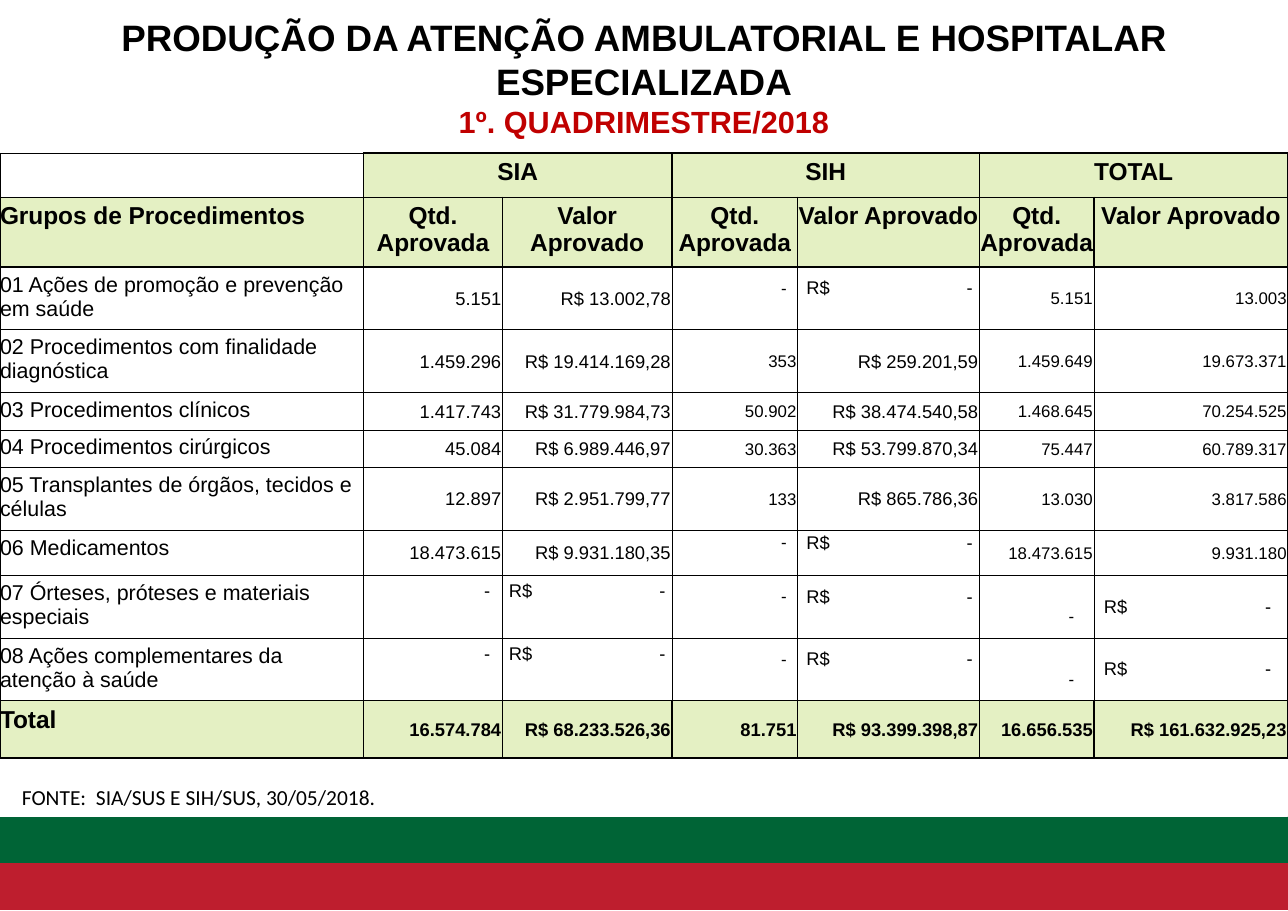
from lxml import etree
from pptx import Presentation
from pptx.dml.color import RGBColor
from pptx.enum.shapes import MSO_SHAPE
from pptx.enum.text import MSO_ANCHOR, PP_ALIGN
from pptx.oxml.ns import qn
from pptx.util import Inches, Pt

LEFT, CENTER, RIGHT = PP_ALIGN.LEFT, PP_ALIGN.CENTER, PP_ALIGN.RIGHT
TOP, MIDDLE = MSO_ANCHOR.TOP, MSO_ANCHOR.MIDDLE
RECT = MSO_SHAPE.RECTANGLE

# Content
WIDTH, HEIGHT = 11.69, 8.27
BLACK, WHITE, LIME = "000000", "FFFFFF", "E4F0C3"
BANDS = [  # top, height, colour, line width
    (7.81, 0.45, "BE1E2E", 0.75),
    (7.38, 0.45, "006436", 0.75),
    (0, 7.4, WHITE, 2),
]
TITLE = [
    ("PRODUÇÃO DA ATENÇÃO AMBULATORIAL E HOSPITALAR ESPECIALIZADA", 24, BLACK),
    ("1º. QUADRIMESTRE/2018", 20, "C00000"),
]
SOURCE = "FONTE:  SIA/SUS E SIH/SUS, 30/05/2018."
GROUPS = ["SIA", "SIH", "TOTAL"]
HEADS = ["Grupos de Procedimentos"] + ["Qtd. Aprovada", "Valor Aprovado"] * 3
BODY = [
    ("01 Ações de promoção e prevenção em saúde", "5.151", "R$ 13.002,78",
     "-", "R$\t-", "5.151", "13.003"),
    ("02 Procedimentos com finalidade diagnóstica", "1.459.296", "R$ 19.414.169,28",
     "353", "R$ 259.201,59", "1.459.649", "19.673.371"),
    ("03 Procedimentos clínicos", "1.417.743", "R$ 31.779.984,73",
     "50.902", "R$ 38.474.540,58", "1.468.645", "70.254.525"),
    ("04 Procedimentos cirúrgicos", "45.084", "R$ 6.989.446,97",
     "30.363", "R$ 53.799.870,34", "75.447", "60.789.317"),
    ("05 Transplantes de órgãos, tecidos e células", "12.897", "R$ 2.951.799,77",
     "133", "R$ 865.786,36", "13.030", "3.817.586"),
    ("06 Medicamentos", "18.473.615", "R$ 9.931.180,35",
     "-", "R$\t-", "18.473.615", "9.931.180"),
    ("07 Órteses, próteses e materiais especiais", "-", "R$\t-",
     "-", "R$\t-", "-", "R$\t-"),
    ("08 Ações complementares da atenção à saúde", "-", "R$\t-",
     "-", "R$\t-", "-", "R$\t-"),
]
SUMS = ("Total", "16.574.784", "R$ 68.233.526,36", "81.751",
        "R$ 93.399.398,87", "16.656.535", "R$ 161.632.925,23")
COLS = [3.3, 1.26, 1.54, 1.14, 1.65, 1.04, 1.76]
ROWS = [0.4, 0.63, 0.57, 0.57, 0.34, 0.34, 0.57, 0.41, 0.57, 0.57, 0.52]
SIZES = [14, 12, 12, 11, 12, 11, 11]
# Dash cells by column: left inset, right inset, lift above the middle
DASH = {1: (0.01, 0.11, 0.28), 2: (0.06, 0.06, 0.28), 3: (0.01, 0.1, 0.18),
        4: (0.08, 0.06, 0.18), 5: (0.01, 0.18, -0.18), 6: (0.09, 0.15, 0)}
LAST = len(ROWS) - 1
THIN, BOLD = 0.5, 0.96


def color(code):
    return RGBColor.from_string(code)


def style(para, size, bold=False, tint=BLACK, face="Arial", align=LEFT):
    para.alignment = align
    font = para.font
    font.size, font.bold, font.name = Pt(size), bold, face
    font.color.rgb = color(tint)


def inset(box, left, top, right, bottom):
    box.margin_left, box.margin_top = Inches(left), Inches(top)
    box.margin_right, box.margin_bottom = Inches(right), Inches(bottom)


def border(cell, row, col):
    head = row < 2 or row == LAST
    blank = row == col == 0
    heavy = {"L": not blank and (head or col == 0),
             "R": head or col == len(COLS) - 1,
             "T": not blank and (head or row == 2),
             "B": head or row == LAST - 1}
    props = cell._tc.get_or_add_tcPr()
    for spot, (side, thick) in enumerate(heavy.items()):
        line = etree.Element(qn(f"a:ln{side}"), w=str(Pt(BOLD if thick else THIN)))
        fill = etree.SubElement(line, qn("a:solidFill"))
        etree.SubElement(fill, qn("a:srgbClr"), val=BLACK)
        props.insert(spot, line)


def fill_cell(cell, row, col, text):
    if (row, col) != (0, 0) and (row < 2 or row == LAST):
        cell.fill.solid()
        cell.fill.fore_color.rgb = color(LIME)
    else:
        cell.fill.background()
    border(cell, row, col)
    if not text:
        return
    para = cell.text_frame.paragraphs[0]
    para.text = text
    label = row < 2 or col == 0
    cell.vertical_anchor = TOP if label else MIDDLE
    if label:
        inset(cell, 0, 0.05, 0, 0.05)
    else:
        inset(cell, 0.01, 0.01, 0.01, 0)
    align = LEFT if col == 0 else CENTER if row < 2 else RIGHT
    if text.endswith("-"):
        left, right, lift = DASH[col]
        inset(cell, left, max(-lift, 0), right, max(lift, 0))
        if "\t" in text:
            align = LEFT
            tabs = etree.SubElement(para._p.get_or_add_pPr(), qn("a:tabLst"))
            stop = Inches(COLS[col] - left - right)
            etree.SubElement(tabs, qn("a:tab"), pos=str(stop), algn="r")
    bold = row < 2 or row == LAST
    if bold:
        size = 16 if label else 12
    else:
        size = 12 if "\t" in text else SIZES[col]
    style(para, size, bold, align=align)


def main():
    deck = Presentation()
    deck.slide_width, deck.slide_height = Inches(WIDTH), Inches(HEIGHT)
    slide = deck.slides.add_slide(deck.slide_layouts[6])
    shapes = slide.shapes

    # Footer bands and white page
    for top, high, tint, thick in BANDS:
        band = shapes.add_shape(RECT, 0, Inches(top), Inches(WIDTH), Inches(high))
        band.shadow.inherit = False
        band.fill.solid()
        band.fill.fore_color.rgb = band.line.color.rgb = color(tint)
        band.line.width = Pt(thick)

    # Title
    frame = shapes.add_textbox(0, Inches(0.14), Inches(WIDTH), Inches(1.43)).text_frame
    frame.word_wrap, frame.vertical_anchor = True, MIDDLE
    inset(frame, 0, 0, 0, 0.31)
    for num, (text, size, tint) in enumerate(TITLE):
        para = frame.add_paragraph() if num else frame.paragraphs[0]
        para.text = text
        style(para, size, True, tint, align=CENTER)

    # Table
    table = shapes.add_table(len(ROWS), len(COLS), 0, Inches(1.39),
                             Inches(WIDTH), Inches(sum(ROWS))).table
    table.first_row = table.horz_banding = False
    for item, wide in zip(table.columns, COLS):
        item.width = Inches(wide)
    for item, high in zip(table.rows, ROWS):
        item.height = Inches(high)
    top = [""] + [part for name in GROUPS for part in (name, "")]
    for row, line in enumerate([top, HEADS, *BODY, SUMS]):
        for col, text in enumerate(line):
            fill_cell(table.cell(row, col), row, col, text)
    for col in range(1, len(COLS), 2):
        table.cell(0, col).merge(table.cell(0, col + 1))

    # Source line
    frame = shapes.add_textbox(Inches(0.1), Inches(7.07), Inches(4.56), Inches(0.42)).text_frame
    frame.word_wrap = True
    frame.text = SOURCE
    style(frame.paragraphs[0], 14, face="Calibri")

    deck.save("out.pptx")


if __name__ == "__main__":
    main()
